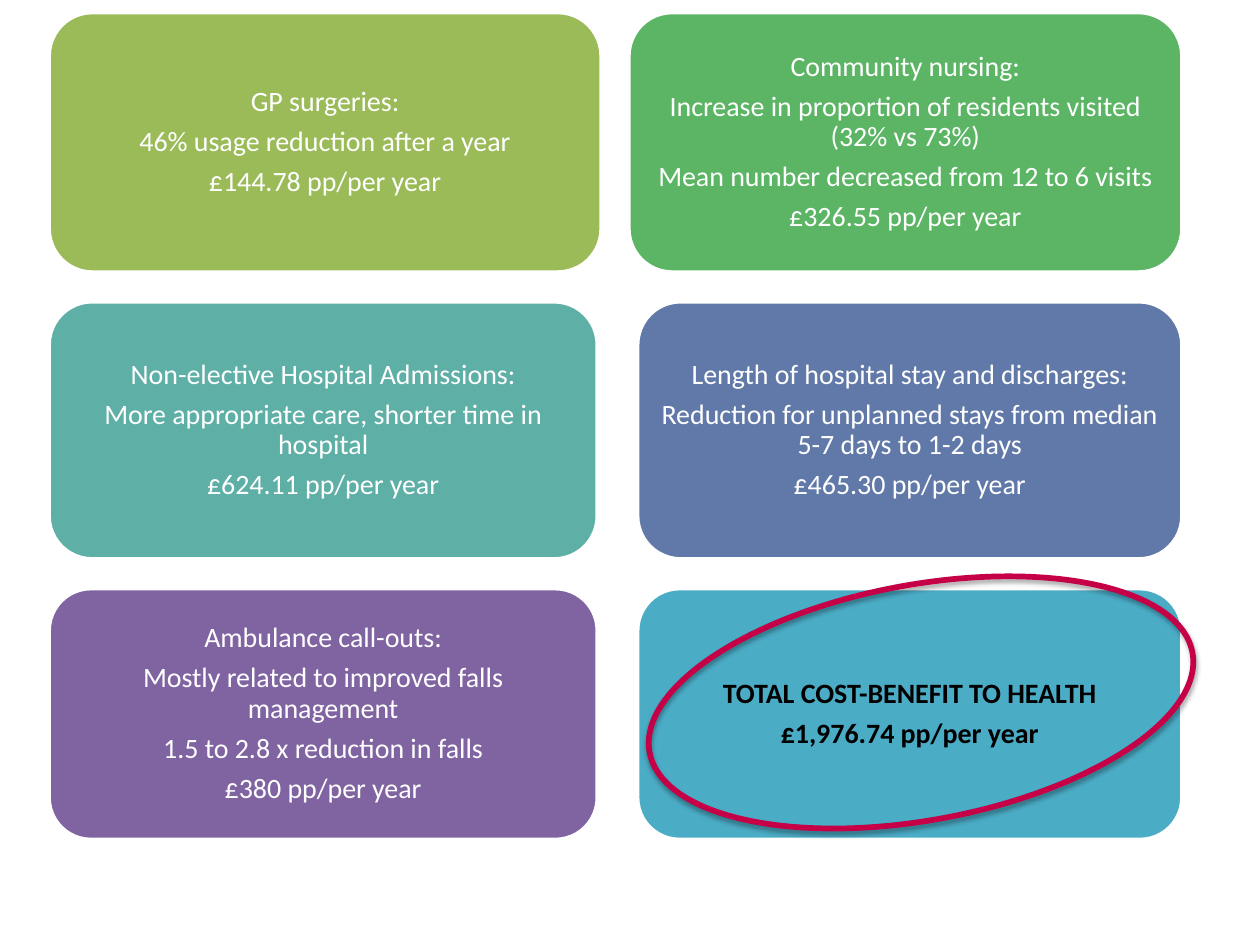
"""Build a slide of yearly health savings as a grid of six rounded cards."""
from lxml import etree
from pptx import Presentation
from pptx.dml.color import RGBColor
from pptx.enum import shapes, text
from pptx.oxml import ns
from pptx.util import Pt

WHITE = RGBColor(0xFF, 0xFF, 0xFF)
BLACK = RGBColor(0x00, 0x00, 0x00)
OLIVE = RGBColor(0x9B, 0xBB, 0x59)
GREEN = RGBColor(0x5C, 0xB5, 0x65)
TEAL = RGBColor(0x5E, 0xAF, 0xA6)
SLATE = RGBColor(0x61, 0x79, 0xA8)
PURPLE = RGBColor(0x80, 0x64, 0xA2)
AQUA = RGBColor(0x4B, 0xAC, 0xC6)
CRIMSON = RGBColor(0xC5, 0x00, 0x46)

SAVINGS = (
    (OLIVE, ("GP surgeries:", "46% usage reduction after a year", "£144.78 pp/per year")),
    (GREEN, ("Community nursing:",
             "Increase in proportion of residents visited (32% vs 73%)",
             "Mean number decreased from 12 to 6 visits",
             "£326.55 pp/per year")),
    (TEAL, ("Non-elective Hospital Admissions:",
            "More appropriate care, shorter time in hospital",
            "£624.11 pp/per year")),
    (SLATE, ("Length of hospital stay and discharges:",
             "Reduction for unplanned stays from median 5-7 days to 1-2 days",
             "£465.30 pp/per year")),
    (PURPLE, ("Ambulance call-outs:",
              "Mostly related to improved falls management",
              "1.5 to 2.8 x reduction in falls",
              "£380 pp/per year")),
)
TOTAL = (AQUA, ("TOTAL COST-BENEFIT TO HEALTH", "£1,976.74 pp/per year"))

GRID_LEFT, GRID_RIGHT, GRID_TOP, ROW_GAP = 28.1, 675.4, 7.2, 17
ROWS = ((148.3, 315.4, 316), (146.9, 313.2, 311), (143.3, 313.2, 311))
RING_BOX = (368.6, 334.1, 315.4, 134.6)


def add_card(slide, box, fill, lines, color, bold):
    shape = slide.shapes.add_shape(shapes.MSO_SHAPE.ROUNDED_RECTANGLE, *map(Pt, box))
    shape.shadow.inherit = False
    shape.fill.solid()
    shape.fill.fore_color.rgb = fill
    shape.line.color.rgb = WHITE
    shape.line.width = Pt(2)
    frame = shape.text_frame
    frame.word_wrap = True
    frame.vertical_anchor = text.MSO_ANCHOR.MIDDLE
    frame.margin_left = frame.margin_right = Pt(5)
    frame.margin_top = frame.margin_bottom = Pt(5)
    for index, line in enumerate(lines):
        paragraph = frame.add_paragraph() if index else frame.paragraphs[0]
        paragraph.alignment = text.PP_ALIGN.CENTER
        paragraph.line_spacing = 0.9
        paragraph.space_after = Pt(5.6)
        run = paragraph.add_run()
        run.text = line
        run.font.name = "Calibri"
        run.font.size = Pt(16)
        run.font.bold = bold
        run.font.color.rgb = color


def add_ring(slide):
    ring = slide.shapes.add_shape(shapes.MSO_SHAPE.OVAL, *map(Pt, RING_BOX))
    ring.rotation = 349.6
    ring.fill.background()
    ring.line.color.rgb = CRIMSON
    ring.line.width = Pt(3.25)
    ring.shadow.inherit = False
    effects = ring.element.spPr.find(ns.qn("a:effectLst"))
    shadow = etree.SubElement(effects, ns.qn("a:outerShdw"), blurRad=str(Pt(3.1)),
                              dist=str(Pt(1.8)), dir="5400000", rotWithShape="0")
    shadow_color = etree.SubElement(shadow, ns.qn("a:srgbClr"), val=str(BLACK))
    etree.SubElement(shadow_color, ns.qn("a:alpha"), val="35000")


def main():
    presentation = Presentation()
    presentation.slide_width, presentation.slide_height = Pt(720), Pt(540)
    slide = presentation.slides.add_slide(presentation.slide_layouts[6])
    boxes = []
    top = GRID_TOP
    for height, left_width, right_width in ROWS:
        boxes.append((GRID_LEFT, top, left_width, height))
        boxes.append((GRID_RIGHT - right_width, top, right_width, height))
        top += height + ROW_GAP
    for box, (fill, lines) in zip(boxes, SAVINGS):
        add_card(slide, box, fill, lines, WHITE, False)
    add_card(slide, boxes[-1], *TOTAL, BLACK, True)
    add_ring(slide)
    presentation.save("out.pptx")


if __name__ == "__main__":
    main()
